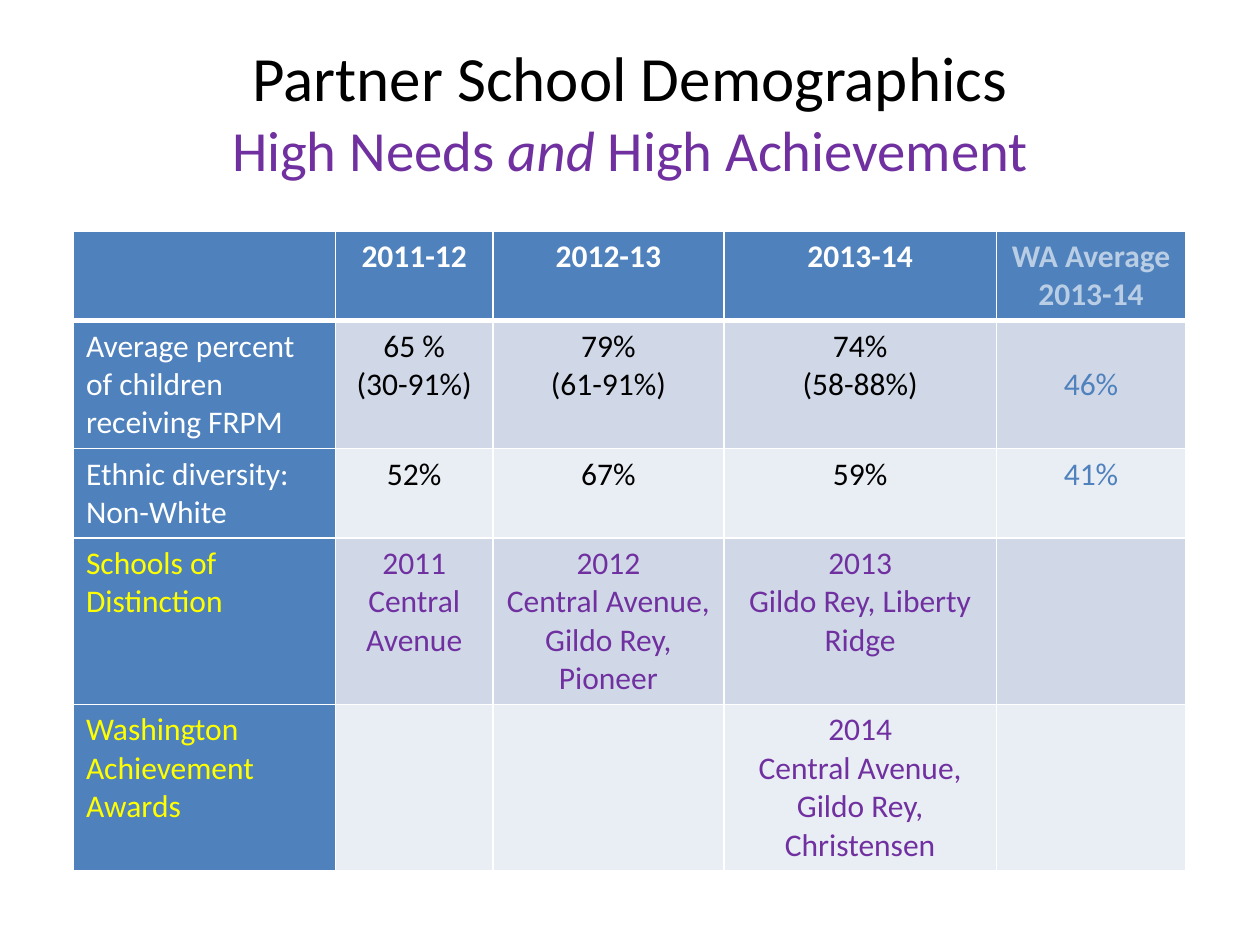
from lxml import etree
from pptx import Presentation
from pptx import util as u
from pptx.dml.color import RGBColor
from pptx.enum import text
from pptx.oxml.ns import qn

COLORS = {
    "black": "000000", "white": "FFFFFF", "purple": "7030A0", "yellow": "FFFF00",
    "blue": "4F81BD", "pale_blue": "B9CDE5", "band_dark": "D0D8E8", "band_light": "E9EDF4",
}
CENTER, LEFT = text.PP_ALIGN.CENTER, text.PP_ALIGN.LEFT
TOP, MIDDLE = text.MSO_ANCHOR.TOP, text.MSO_ANCHOR.MIDDLE

COL_WIDTHS = [5.28, 3.18, 4.65, 5.5, 3.81]
ROW_LINES = [2, 3, 2, 4, 4]

# Each cell holds its paragraphs, separated by line ends
ROWS = [
    ["", "2011-12", "2012-13", "2013-14", "WA Average\n2013-14"],
    ["Average percent of children receiving FRPM", "65 %\n(30-91%)", "79%\n(61-91%)",
     "74%\n(58-88%)", "46%"],
    ["Ethnic diversity: Non-White", "52%", "67%", "59%", "41%"],
    ["Schools of Distinction", "2011\nCentral Avenue",
     "2012\nCentral Avenue,\nGildo Rey, Pioneer", "2013\nGildo Rey, Liberty Ridge", ""],
    ["Washington Achievement Awards", "", "",
     "2014\nCentral Avenue, Gildo Rey, Christensen", ""],
]

# Text colours by row: label column, year columns, state average column
ROW_COLORS = [
    ("white", "white", "pale_blue"),
    ("white", "black", "blue"),
    ("white", "black", "blue"),
    ("yellow", "purple", "purple"),
    ("yellow", "purple", "purple"),
]


def format_font(font, color, **values):
    font.color.rgb = RGBColor.from_string(COLORS[color])
    for name, value in {"name": "Calibri", **values}.items():
        setattr(font, name, value)


def add_run(p, words, color, size, **values):
    r = p.add_run()
    r.text = words
    format_font(r.font, color, size=u.Pt(size), **values)


def add_title(s):
    sp = s.shapes.title
    sp.left, sp.top, sp.width, sp.height = map(u.Cm, (1.27, 0.64, 22.86, 3.18))
    tf = sp.text_frame
    tf.word_wrap, tf.vertical_anchor = True, MIDDLE
    tf.auto_size = text.MSO_AUTO_SIZE.NONE
    p = tf.paragraphs[0]
    p.alignment = CENTER
    add_run(p, "Partner School Demographics", "black", 36)
    p.add_line_break()
    for words, italic in (("High Needs ", False), ("and", True), (" High Achievement", False)):
        add_run(p, words, "purple", 32.4, italic=italic)


def set_borders(cell, row):
    """White rules, thicker under the header row."""
    widths = {"L": 1, "R": 1, "T": 3 if row == 1 else 1, "B": 3 if row == 0 else 1}
    tc_pr = cell._tc.get_or_add_tcPr()
    for side, width in widths.items():
        ln = etree.SubElement(tc_pr, qn(f"a:ln{side}"), w=str(u.Pt(width)))
        fill = etree.SubElement(ln, qn("a:solidFill"))
        etree.SubElement(fill, qn("a:srgbClr"), val=COLORS["white"])


def fill_cell(cell, words, row, col):
    # Borders come before the fill in the cell properties
    set_borders(cell, row)
    band = "blue" if row == 0 or col == 0 else "band_dark" if row % 2 else "band_light"
    cell.fill.solid()
    cell.fill.fore_color.rgb = RGBColor.from_string(COLORS[band])
    cell.vertical_anchor = MIDDLE if (row, col) == (1, 4) else TOP

    label, year, average = ROW_COLORS[row]
    color = label if col == 0 else average if col == 4 else year
    cell.text_frame.text = words
    for p in cell.text_frame.paragraphs:
        p.alignment = LEFT if col == 0 else CENTER
        format_font(p.font, color, size=u.Pt(18), bold=row == 0)
        for r in p.runs:
            format_font(r.font, color, size=u.Pt(18), bold=row == 0)


def add_demographics_table(s):
    heights = [0.78 * lines + 0.23 for lines in ROW_LINES]
    table = s.shapes.add_table(len(ROWS), len(COL_WIDTHS), u.Cm(1.48), u.Cm(4.66),
                               u.Cm(sum(COL_WIDTHS)), u.Cm(sum(heights))).table
    for column, width in zip(table.columns, COL_WIDTHS):
        column.width = u.Cm(width)
    for row, (height, cells) in enumerate(zip(heights, ROWS)):
        table.rows[row].height = u.Cm(height)
        for col, words in enumerate(cells):
            fill_cell(table.cell(row, col), words, row, col)


def main():
    prs = Presentation()
    prs.slide_width, prs.slide_height = u.Cm(25.4), u.Cm(19.05)
    s = prs.slides.add_slide(prs.slide_layouts[5])
    add_title(s)
    add_demographics_table(s)
    prs.save("out.pptx")


if __name__ == "__main__":
    main()
